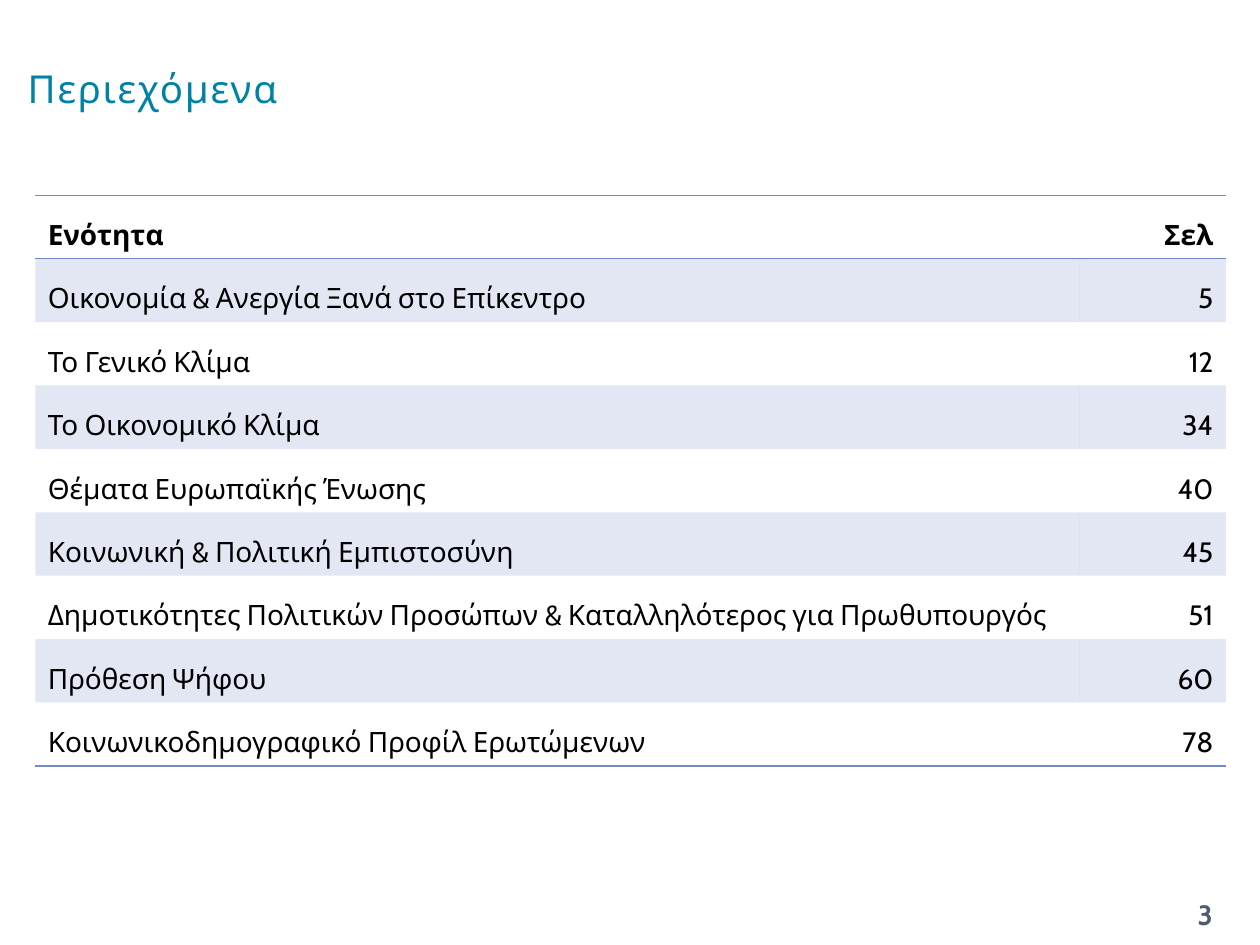
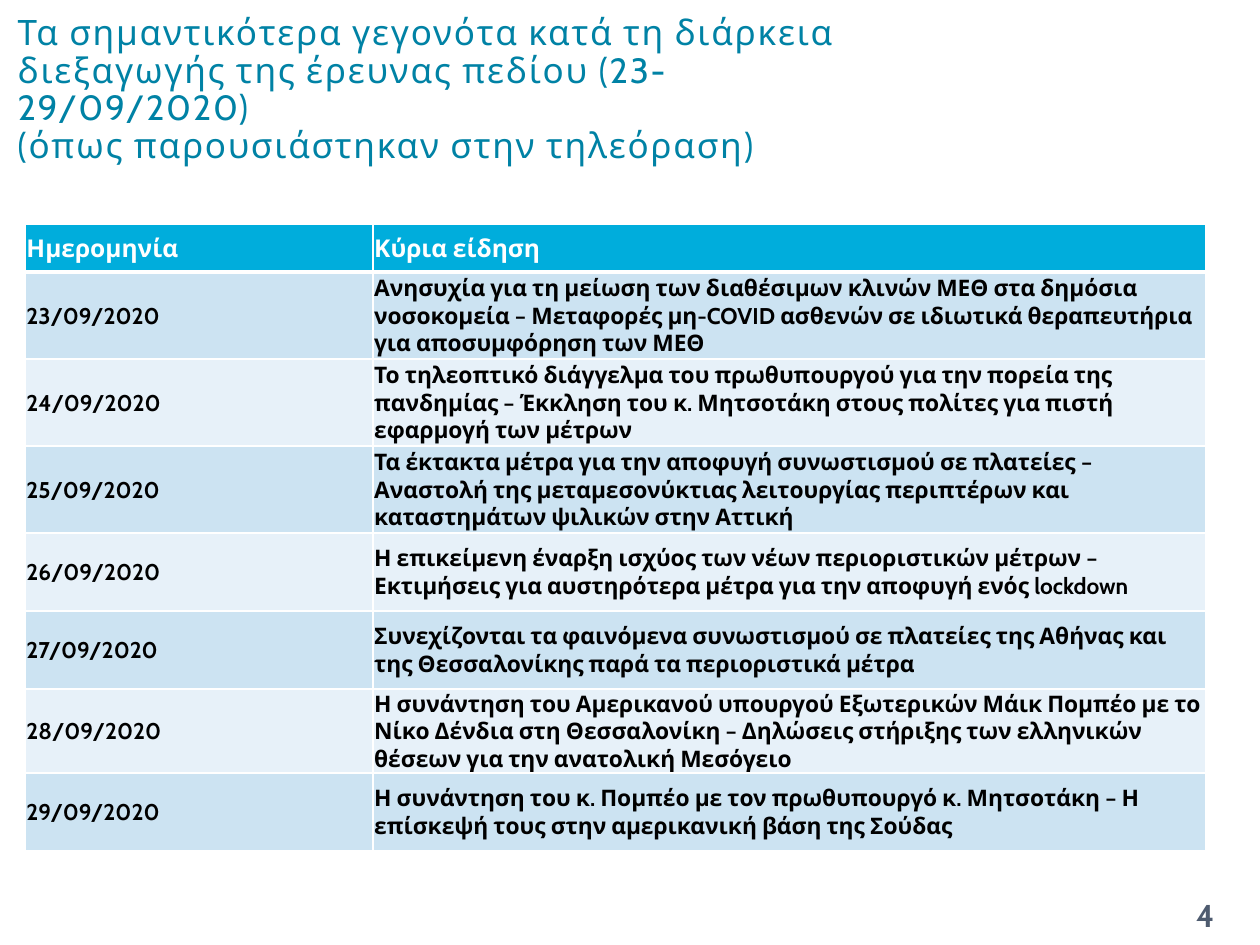
"""Build the contents slide and the slide of daily news events."""
from copy import deepcopy

from pptx import Presentation
from pptx.dml.color import RGBColor
from pptx.enum.text import MSO_ANCHOR as Anchor, MSO_AUTO_SIZE as AutoSize, PP_ALIGN as Align
from pptx.oxml import parse_xml
from pptx.oxml.ns import nsdecls, qn
from pptx.util import Inches, Pt

FONT = "Cabin"
COLORS = {
    "title": "0082A5",
    "page": "4E5B6F",
    "text": "000000",
    "white": "FFFFFF",
    "rule": "738AC8",
    "header": "00ADDC",
    "dark_band": "CCE3F2",
    "light_band": "E7F1F9",
}
NO_STYLE = "{2D5ABB26-0587-4C30-8999-92F81FD0307C}"
TITLE_ONLY = 5

CONTENTS = [
    ("Ενότητα", "Σελ"),
    ("Οικονομία & Ανεργία Ξανά στο Επίκεντρο", "5"),
    ("Το Γενικό Κλίμα", "12"),
    ("Το Οικονομικό Κλίμα", "34"),
    ("Θέματα Ευρωπαϊκής Ένωσης", "40"),
    ("Κοινωνική & Πολιτική Εμπιστοσύνη", "45"),
    ("Δημοτικότητες Πολιτικών Προσώπων & Καταλληλότερος για Πρωθυπουργός", "51"),
    ("Πρόθεση Ψήφου", "60"),
    ("Κοινωνικοδημογραφικό Προφίλ Ερωτώμενων", "78"),
]
EVENTS = [
    ("Ημερομηνία", "Κύρια είδηση"),
    ("23/09/2020", "Ανησυχία για τη μείωση των διαθέσιμων κλινών ΜΕΘ στα δημόσια νοσοκομεία – "
                   "Μεταφορές μη-COVID ασθενών σε ιδιωτικά θεραπευτήρια για αποσυμφόρηση των ΜΕΘ"),
    ("24/09/2020", "Το τηλεοπτικό διάγγελμα του πρωθυπουργού για την πορεία της πανδημίας – "
                   "Έκκληση του κ. Μητσοτάκη στους πολίτες για πιστή εφαρμογή των μέτρων"),
    ("25/09/2020", "Τα έκτακτα μέτρα για την αποφυγή συνωστισμού σε πλατείες – Αναστολή της "
                   "μεταμεσονύκτιας λειτουργίας περιπτέρων και καταστημάτων ψιλικών στην Αττική"),
    ("26/09/2020", "Η επικείμενη έναρξη ισχύος των νέων περιοριστικών μέτρων – Εκτιμήσεις για "
                   "αυστηρότερα μέτρα για την αποφυγή ενός lockdown"),
    ("27/09/2020", "Συνεχίζονται τα φαινόμενα συνωστισμού σε πλατείες της Αθήνας και της "
                   "Θεσσαλονίκης παρά τα περιοριστικά μέτρα"),
    ("28/09/2020", "Η συνάντηση του Αμερικανού υπουργού Εξωτερικών Μάικ Πομπέο με το Νίκο Δένδια "
                   "στη Θεσσαλονίκη – Δηλώσεις στήριξης των ελληνικών θέσεων για την ανατολική "
                   "Μεσόγειο"),
    ("29/09/2020", "Η συνάντηση του κ. Πομπέο με τον πρωθυπουργό κ. Μητσοτάκη – Η επίσκεψή τους "
                   "στην αμερικανική βάση της Σούδας"),
]


def write_text(frame, text, size, color="text", bold=False, align=Align.LEFT,
               line_spacing=1.0, letter_spacing=0):
    """Write one formatted paragraph into a text frame."""
    paragraph = frame.paragraphs[0]
    paragraph.text = text
    paragraph.alignment = align
    paragraph.line_spacing = line_spacing
    for run in paragraph.runs:
        run.font.name = FONT
        run.font.size = Pt(size)
        run.font.bold = bold
        run.font.color.rgb = RGBColor.from_string(COLORS[color])
        if letter_spacing:
            run.font._element.set("spc", str(letter_spacing * 100))
    for line_break in paragraph._p.findall(qn("a:br")):
        line_break.insert(0, deepcopy(paragraph.runs[0].font._element))


def place(shape, left, top, width, height):
    """Set the position and size of a shape in inches."""
    shape.left, shape.top = Inches(left), Inches(top)
    shape.width, shape.height = Inches(width), Inches(height)


def add_titled_slide(presentation, title, left, width, size):
    """Add a slide with its title at the top left."""
    slide = presentation.slides.add_slide(presentation.slide_layouts[TITLE_ONLY])
    place(slide.shapes.title, left, 0.13, width, 1.18)
    frame = slide.shapes.title.text_frame
    frame.word_wrap = True
    frame.auto_size = AutoSize.NONE
    frame.vertical_anchor = Anchor.MIDDLE
    write_text(frame, title, size, "title", line_spacing=0.9, letter_spacing=1)
    return slide


def add_page_number(slide, number, size):
    """Add the page number at the bottom right."""
    box = slide.shapes.add_textbox(Inches(9.17), Inches(7.06), Inches(0.79), Inches(0.4))
    box.text_frame.word_wrap = True
    box.text_frame.vertical_anchor = Anchor.MIDDLE
    write_text(box.text_frame, number, size, "page", bold=True, align=Align.CENTER)


def add_plain_table(slide, left, top, widths, heights):
    """Add a table without a style."""
    frame = slide.shapes.add_table(len(heights), len(widths), Inches(left), Inches(top),
                                   Inches(sum(widths)), Inches(sum(heights)))
    table = frame.table
    table._tbl.tblPr.find(qn("a:tableStyleId")).text = NO_STYLE
    table.horz_banding = False
    for column, width in zip(table.columns, widths):
        column.width = Inches(width)
    for row, height in zip(table.rows, heights):
        row.height = Inches(height)
    return table


def set_borders(cell, color, **widths):
    """Draw the given sides (L, R, T, B) of a cell, before its fill is set."""
    properties = cell._tc.get_or_add_tcPr()
    for side in "LRTB":
        if side in widths:
            properties.append(parse_xml(
                f'<a:ln{side} {nsdecls("a")} w="{Pt(widths[side])}"><a:solidFill>'
                f'<a:srgbClr val="{COLORS[color]}"/></a:solidFill></a:ln{side}>'))


def fill_cell(cell, color, opacity=100):
    """Fill a cell with a colour at a percentage of opacity."""
    cell.fill.solid()
    cell.fill.fore_color.rgb = RGBColor.from_string(COLORS[color])
    if opacity < 100:
        value = cell._tc.tcPr.find(qn("a:solidFill")).find(qn("a:srgbClr"))
        value.append(parse_xml(f'<a:alpha {nsdecls("a")} val="{opacity * 1000}"/>'))


def add_contents_table(slide):
    """Add the table of sections and page numbers."""
    table = add_plain_table(slide, 0.28, 1.55, [8.29, 1.16], [0.5] * len(CONTENTS))
    last = len(CONTENTS) - 1
    for row, entry in enumerate(CONTENTS):
        for column, text in enumerate(entry):
            cell = table.cell(row, column)
            cell.vertical_anchor = Anchor.MIDDLE
            write_text(cell.text_frame, text, 16, bold=row == 0, line_spacing=1.5,
                       align=Align.RIGHT if column else Align.LEFT)
            if row == 0:
                set_borders(cell, "rule", T=1, B=1)
            elif row == last:
                set_borders(cell, "rule", B=1)
            if row % 2:
                fill_cell(cell, "rule", opacity=20)
            else:
                cell.fill.background()


def add_events_table(slide):
    """Add the table of dates and main news."""
    heights = [0.38] + [0.69] * 3 + [0.62] * 4
    table = add_plain_table(slide, 0.2, 1.78, [2.76, 6.61], heights)
    for row, event in enumerate(EVENTS):
        is_header = row == 0
        band = "header" if is_header else "dark_band" if row % 2 else "light_band"
        for column, text in enumerate(event):
            cell = table.cell(row, column)
            cell.vertical_anchor = Anchor.MIDDLE
            cell.margin_left = cell.margin_right = cell.margin_top = Inches(0.01)
            cell.margin_bottom = 0
            write_text(cell.text_frame, text, 14 if is_header else 13,
                       "white" if is_header else "text", bold=True)
            set_borders(cell, "white", L=1, R=1, T=3 if row == 1 else 1,
                        B=3 if is_header else 1)
            fill_cell(cell, band)


def main():
    """Build and save the presentation."""
    presentation = Presentation()
    presentation.slide_width, presentation.slide_height = Inches(10), Inches(7.5)

    contents = add_titled_slide(presentation, "Περιεχόμενα", 0.12, 6.85, 22)
    add_contents_table(contents)
    add_page_number(contents, "3", 16)

    events = add_titled_slide(
        presentation,
        "Τα σημαντικότερα γεγονότα κατά τη διάρκεια διεξαγωγής της έρευνας πεδίου "
        "(23-29/09/2020)\v(όπως παρουσιάστηκαν στην τηλεόραση)", 0.04, 7.09, 20)
    add_events_table(events)
    add_page_number(events, "4", 18)

    presentation.save("out.pptx")


if __name__ == "__main__":
    main()
